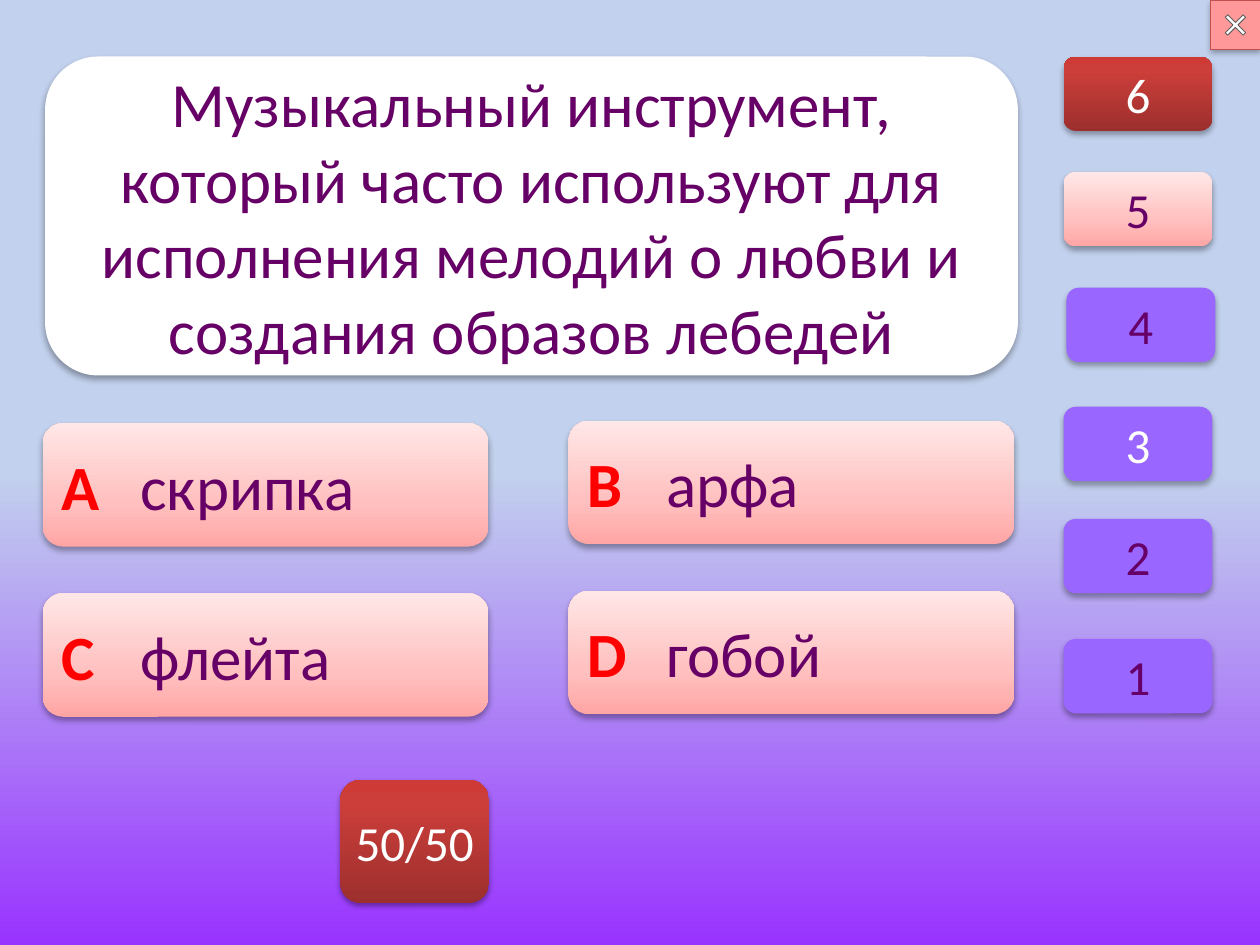
from dataclasses import dataclass

from lxml.etree import SubElement
from pptx import Presentation
from pptx.dml.color import RGBColor
from pptx.enum.shapes import MSO_SHAPE
from pptx.enum.text import MSO_ANCHOR, PP_ALIGN
from pptx.oxml.ns import qn
from pptx.util import Cm, Pt

COLORS = {
    "white": "FFFFFF",
    "black": "000000",
    "plum": "660066",
    "red": "FF0000",
    "violet": "9966FF",
    "pink": "FF9999",
    "grey": "5F5F5F",
    "brick": "C0504D",
}
# Stops run from the bottom edge to the top edge: position in percent, colour
GRADIENTS = {
    "sky": [(0, "9933FF"), (50, "C2D1ED")],
    "rose": [(0, "FFA6A5"), (35, "FFC0BF"), (100, "FFE7E7")],
    "ruby": [(0, "9C2F2D"), (80, "CB3E3A"), (100, "CE3B37")],
}
FONT = "Calibri"


@dataclass(frozen=True)
class Box:
    left: float
    top: float
    width: float
    height: float


@dataclass(frozen=True)
class Shadow:
    opacity: int
    blur: float
    distance: float


@dataclass(frozen=True)
class Button:
    text: str
    box: Box
    fill: str
    color: str
    shadow: Shadow


@dataclass(frozen=True)
class Answer:
    letter: str
    text: str
    left: float
    top: float


SOFT = Shadow(32, 3.5, 2.2)
TIGHT = Shadow(35, 3.1, 1.8)
ANSWER_WIDTH, ANSWER_HEIGHT = 8.99, 2.49
BUTTON_WIDTH, LEVEL_HEIGHT = 3, 1.5

QUESTION = ("Музыкальный инструмент, который часто используют для "
            "исполнения мелодий о любви и создания образов лебедей")
ANSWERS = [
    Answer("D", "гобой", 11.46, 11.91),
    Answer("C", "флейта", 0.86, 11.96),
    Answer("В", "арфа", 11.46, 8.48),
    Answer("А", "скрипка", 0.86, 8.53),
]


def level(number: int, top: float, fill: str, color: str, left: float = 21.44) -> Button:
    return Button(str(number), Box(left, top, BUTTON_WIDTH, LEVEL_HEIGHT), fill, color, SOFT)


BUTTONS = [
    Button("50/50", Box(6.86, 15.72, BUTTON_WIDTH, ANSWER_HEIGHT), "ruby", "white", TIGHT),
    level(6, 1.14, "ruby", "white"),
    level(5, 3.47, "rose", "plum"),
    level(4, 5.8, "violet", "plum", left=21.5),
    level(3, 8.2, "violet", "white"),
    level(2, 10.46, "violet", "plum"),
    level(1, 12.88, "violet", "plum"),
]


def rgb(name: str) -> RGBColor:
    return RGBColor.from_string(COLORS[name])


def paint(owner, element, name: str) -> None:
    """Fill a shape or background with a plain colour or an upward gradient."""
    owner.fill.solid()
    if name in COLORS:
        owner.fill.fore_color.rgb = rgb(name)
        return
    solid = element.find(".//" + qn("a:solidFill"))
    parent = solid.getparent()
    gradient = SubElement(parent, qn("a:gradFill"), rotWithShape="1")
    parent.replace(solid, gradient)
    stops = SubElement(gradient, qn("a:gsLst"))
    for position, color in GRADIENTS[name]:
        stop = SubElement(stops, qn("a:gs"), pos=str(position * 1000))
        SubElement(stop, qn("a:srgbClr"), val=color)
    SubElement(gradient, qn("a:lin"), ang=str(270 * 60000), scaled="0")


def add_shadow(shape, shadow: Shadow) -> None:
    effects = shape._element.spPr.find(qn("a:effectLst"))
    outer = SubElement(effects, qn("a:outerShdw"), blurRad=str(Pt(shadow.blur)),
                       dist=str(Pt(shadow.distance)), dir=str(90 * 60000), rotWithShape="0")
    color = SubElement(outer, qn("a:srgbClr"), val=COLORS["black"])
    SubElement(color, qn("a:alpha"), val=str(shadow.opacity * 1000))


def add_box(slide, kind, box: Box, fill: str | None, line: str | None = None,
            shadow: Shadow | None = None):
    shape = slide.shapes.add_shape(kind, Cm(box.left), Cm(box.top), Cm(box.width), Cm(box.height))
    shape.shadow.inherit = False
    if fill:
        paint(shape, shape._element.spPr, fill)
    else:
        shape.fill.background()
    if line:
        shape.line.color.rgb = rgb(line)
        shape.line.width = Pt(0.5)
    else:
        shape.line.fill.background()
    if shadow:
        add_shadow(shape, shadow)
    return shape


def write(shape, text: str, size: int, color: str, wrap: bool) -> None:
    frame = shape.text_frame
    frame.word_wrap = wrap
    frame.vertical_anchor = MSO_ANCHOR.MIDDLE
    paragraph = frame.paragraphs[0]
    paragraph.text = text
    paragraph.alignment = PP_ALIGN.CENTER
    paragraph.font.name = FONT
    paragraph.font.size = Pt(size)
    paragraph.font.color.rgb = rgb(color)


def add_button(slide, button: Button) -> None:
    shape = add_box(slide, MSO_SHAPE.ROUNDED_RECTANGLE, button.box, button.fill,
                    shadow=button.shadow)
    write(shape, button.text, 28, button.color, wrap=False)


def add_answer(slide, answer: Answer) -> None:
    box = Box(answer.left, answer.top, ANSWER_WIDTH, ANSWER_HEIGHT)
    shape = add_box(slide, MSO_SHAPE.ROUNDED_RECTANGLE, box, "rose", shadow=SOFT)
    frame = shape.text_frame
    frame.word_wrap = True
    frame.vertical_anchor = MSO_ANCHOR.MIDDLE
    paragraph = frame.paragraphs[0]
    paragraph.alignment = PP_ALIGN.LEFT
    tabs = SubElement(paragraph._p.get_or_add_pPr(), qn("a:tabLst"))
    SubElement(tabs, qn("a:tab"), pos=str(Cm(1.6)), algn="l")
    paragraph.font.name = FONT
    paragraph.font.size = Pt(36)
    for text, color, bold in ((answer.letter + "\t", "red", True), (answer.text, "plum", False)):
        run = paragraph.add_run()
        run.text = text
        run.font.bold = bold
        run.font.color.rgb = rgb(color)


def add_close_button(slide) -> None:
    frame = Box(24.41, 0, 0.99, 0.99)
    add_box(slide, MSO_SHAPE.ACTION_BUTTON_CUSTOM, frame, "pink", shadow=SOFT)
    cross = add_box(slide, MSO_SHAPE.CROSS, Box(24.65, 0.25, 0.51, 0.51), "white", "grey")
    cross.adjustments[0] = 0.43
    cross.rotation = 45
    add_box(slide, MSO_SHAPE.ACTION_BUTTON_CUSTOM, frame, None, "brick")


def main() -> None:
    presentation = Presentation()
    presentation.slide_width, presentation.slide_height = Cm(25.4), Cm(19.05)
    slide = presentation.slides.add_slide(presentation.slide_layouts[6])
    paint(slide.background, slide._element, "sky")

    add_close_button(slide)

    # Question panel
    panel = add_box(slide, MSO_SHAPE.ROUNDED_RECTANGLE, Box(0.91, 1.14, 19.61, 6.43),
                    "white", shadow=SOFT)
    write(panel, QUESTION, 36, "plum", wrap=True)

    # Answers, then the hint and the level ladder
    for answer in ANSWERS:
        add_answer(slide, answer)
    for button in BUTTONS:
        add_button(slide, button)
    presentation.save("out.pptx")


if __name__ == "__main__":
    main()
